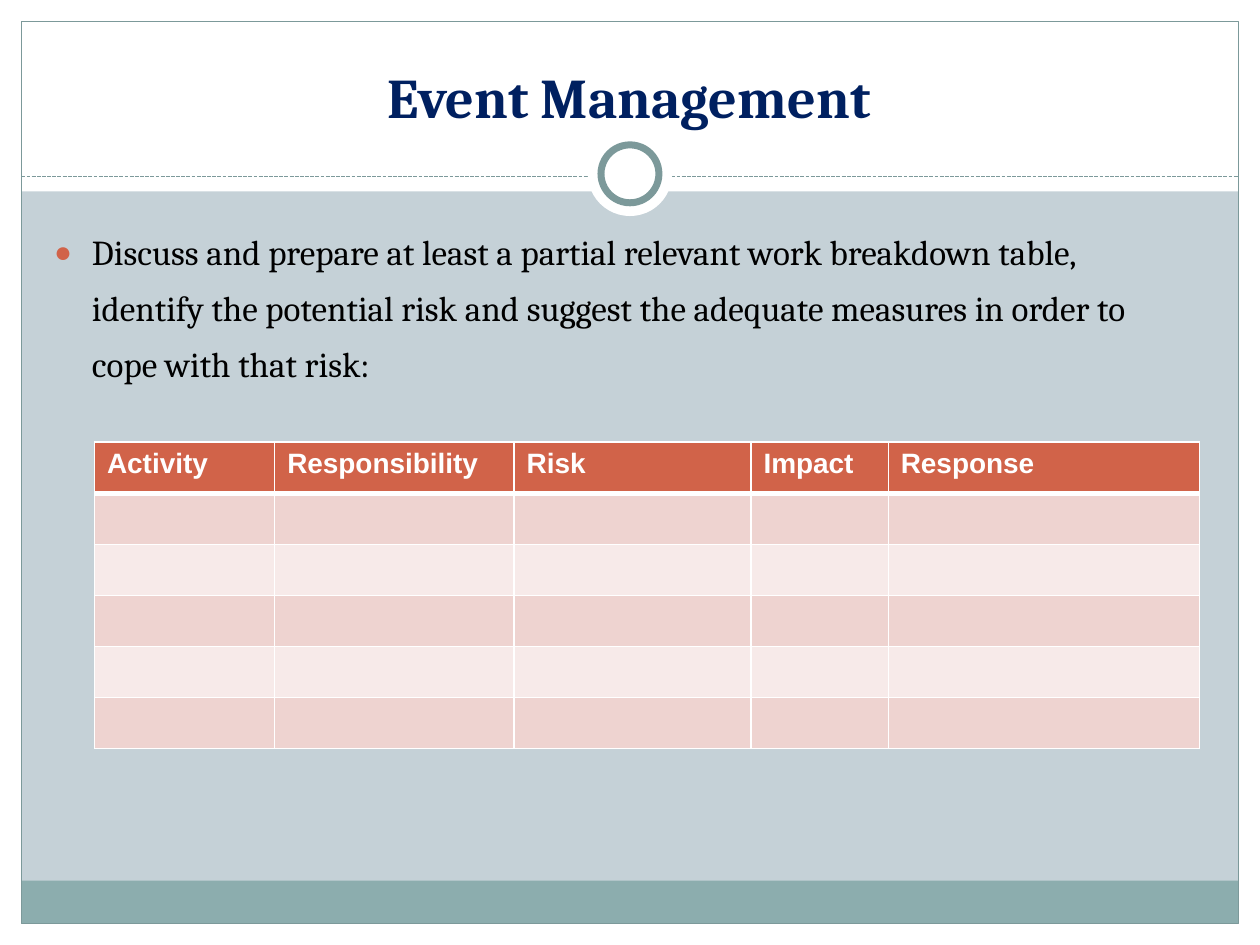
from pptx import Presentation
from pptx.dml.color import RGBColor
from pptx.enum.dml import MSO_LINE
from pptx.enum.shapes import MSO_CONNECTOR, MSO_SHAPE
from pptx.enum.text import MSO_ANCHOR, MSO_AUTO_SIZE, PP_ALIGN
from pptx.oxml import parse_xml
from pptx.oxml.ns import nsdecls
from pptx.oxml.xmlchemy import OxmlElement
from pptx.util import Inches, Pt

WHITE = RGBColor(0xFF, 0xFF, 0xFF)
BLACK = RGBColor(0x00, 0x00, 0x00)
NAVY = RGBColor(0x00, 0x20, 0x60)
MIST = RGBColor(0xC5, 0xD1, 0xD7)
TEAL = RGBColor(0x8C, 0xAD, 0xAE)
SLATE = RGBColor(0x7C, 0x99, 0x9A)
RUST = RGBColor(0xD1, 0x63, 0x49)
ROSE = RGBColor(0xEE, 0xD3, 0xD0)
BLUSH = RGBColor(0xF7, 0xEA, 0xE9)

WIDTH, HEIGHT, EDGE = 10, 7.5, 0.17
TITLE = "Event Management"
TASK = ("Discuss and prepare at least a partial relevant work breakdown table, "
        "identify the potential risk and suggest the adequate measures "
        "in order to cope with that risk:")
HEADS = ["Activity", "Responsibility", "Risk", "Impact", "Response"]
COLS = [1.43, 1.9, 1.88, 1.09, 2.47]
BANDS = [RUST, ROSE, BLUSH, ROSE, BLUSH, ROSE]


def inches(box):
    return [Inches(n) for n in box]


def place(shape, box):
    shape.left, shape.top, shape.width, shape.height = inches(box)


def style(font, name, size, color, bold=False):
    font.name, font.size, font.bold = name, Pt(size), bold
    font.color.rgb = color


def add_form(slide, kind, box, fill=None, line=None, weight=0.75):
    form = slide.shapes.add_shape(kind, *inches(box))
    form.shadow.inherit = False
    if fill is None:
        form.fill.background()
    else:
        form.fill.solid()
        form.fill.fore_color.rgb = fill
    if line is None:
        form.line.fill.background()
    else:
        form.line.color.rgb = line
        form.line.width = Pt(weight)


def add_frame(slide, box):
    left, top, width, height = box
    right, base = left + width, top + height
    inner = width - 2 * EDGE
    rect = MSO_SHAPE.RECTANGLE
    # White margins and header
    add_form(slide, rect, (left, base - EDGE, width, EDGE), WHITE)
    add_form(slide, rect, (left, top, width, 1.52), WHITE)
    for side in (left, right - EDGE):
        add_form(slide, rect, (side, top, EDGE, height), WHITE)
    # Footer band and outline
    add_form(slide, rect, (left + EDGE, base - 0.51, inner, 0.34), TEAL)
    add_form(slide, rect, (left + EDGE, top + EDGE, inner, height - 2 * EDGE),
             line=SLATE)
    # Dashed rule
    rule = slide.shapes.add_connector(
        MSO_CONNECTOR.STRAIGHT,
        *inches((left + EDGE, top + 1.4, right - EDGE, top + 1.4)))
    rule.line.color.rgb = SLATE
    rule.line.width = Pt(0.75)
    rule.line.dash_style = MSO_LINE.SQUARE_DOT
    rule._element.spPr.append(OxmlElement("a:effectLst"))
    # Ring in the middle of the rule
    mid, level = left + width / 2, top + 1.38
    for size, line in ((0.67, None), (0.46, SLATE)):
        add_form(slide, MSO_SHAPE.OVAL,
                 (mid - size / 2, level - size / 2, size, size),
                 WHITE, line, 4)


def lift(slide, holder):
    """Bring a placeholder in front of the frame."""
    slide.shapes._spTree.append(holder._element)


def fill_title(slide, box):
    title = slide.shapes.title
    lift(slide, title)
    place(title, box)
    frame = title.text_frame
    frame.text = TITLE
    frame.auto_size = MSO_AUTO_SIZE.NONE
    frame.vertical_anchor = MSO_ANCHOR.BOTTOM
    para = frame.paragraphs[0]
    para.alignment = PP_ALIGN.CENTER
    style(para.runs[0].font, "Cambria", 32, NAVY, True)


def fill_body(slide, box):
    body = slide.placeholders[1]
    lift(slide, body)
    place(body, box)
    frame = body.text_frame
    frame.text = TASK
    frame.auto_size = MSO_AUTO_SIZE.NONE
    para = frame.paragraphs[0]
    para.line_spacing = Pt(32)
    para.space_before, para.space_after = Pt(0), Pt(12)
    style(para.runs[0].font, "Cambria", 20, BLACK)
    # Round bullet with hanging indent
    props = para._p.get_or_add_pPr()
    props.set("marL", str(Inches(0.3)))
    props.set("indent", str(Inches(-0.3)))
    for xml in (f'<a:buClr {nsdecls("a")}><a:srgbClr val="{RUST}"/></a:buClr>',
                f'<a:buSzPct {nsdecls("a")} val="85000"/>',
                f'<a:buChar {nsdecls("a")} char="●"/>'):
        props.append(parse_xml(xml))


def set_edge(cell, side, weight):
    cell._tc.get_or_add_tcPr().append(parse_xml(
        f'<a:ln{side} {nsdecls("a")} w="{Pt(weight)}"><a:solidFill>'
        f'<a:srgbClr val="{WHITE}"/></a:solidFill></a:ln{side}>'))


def add_grid(slide, box):
    grid = slide.shapes.add_table(len(BANDS), len(COLS), *inches(box)).table
    for col, width in zip(grid.columns, COLS):
        col.width = Inches(width)
    for r, band in enumerate(BANDS):
        grid.rows[r].height = Inches(box[3] / len(BANDS))
        for c, head in enumerate(HEADS):
            cell = grid.cell(r, c)
            # Heavy line between header and rows
            for side in "LRTB":
                heavy = (r, side) in ((0, "B"), (1, "T"))
                set_edge(cell, side, 3 if heavy else 1)
            cell.fill.solid()
            cell.fill.fore_color.rgb = band
            if r == 0:
                cell.text_frame.text = head
                run = cell.text_frame.paragraphs[0].runs[0]
                style(run.font, "Arial", 16, WHITE, True)


def main():
    deck = Presentation()
    deck.slide_width, deck.slide_height = Inches(WIDTH), Inches(HEIGHT)
    slide = deck.slides.add_slide(deck.slide_layouts[1])
    slide.background.fill.solid()
    slide.background.fill.fore_color.rgb = MIST
    add_frame(slide, (0, 0, WIDTH, HEIGHT))
    fill_title(slide, (0.33, 0.25, 9.33, 0.83))
    fill_body(slide, (0.33, 1.67, 9.24, 5))
    add_grid(slide, (0.75, 3.51, sum(COLS), 2.43))
    deck.save("out.pptx")


if __name__ == "__main__":
    main()
